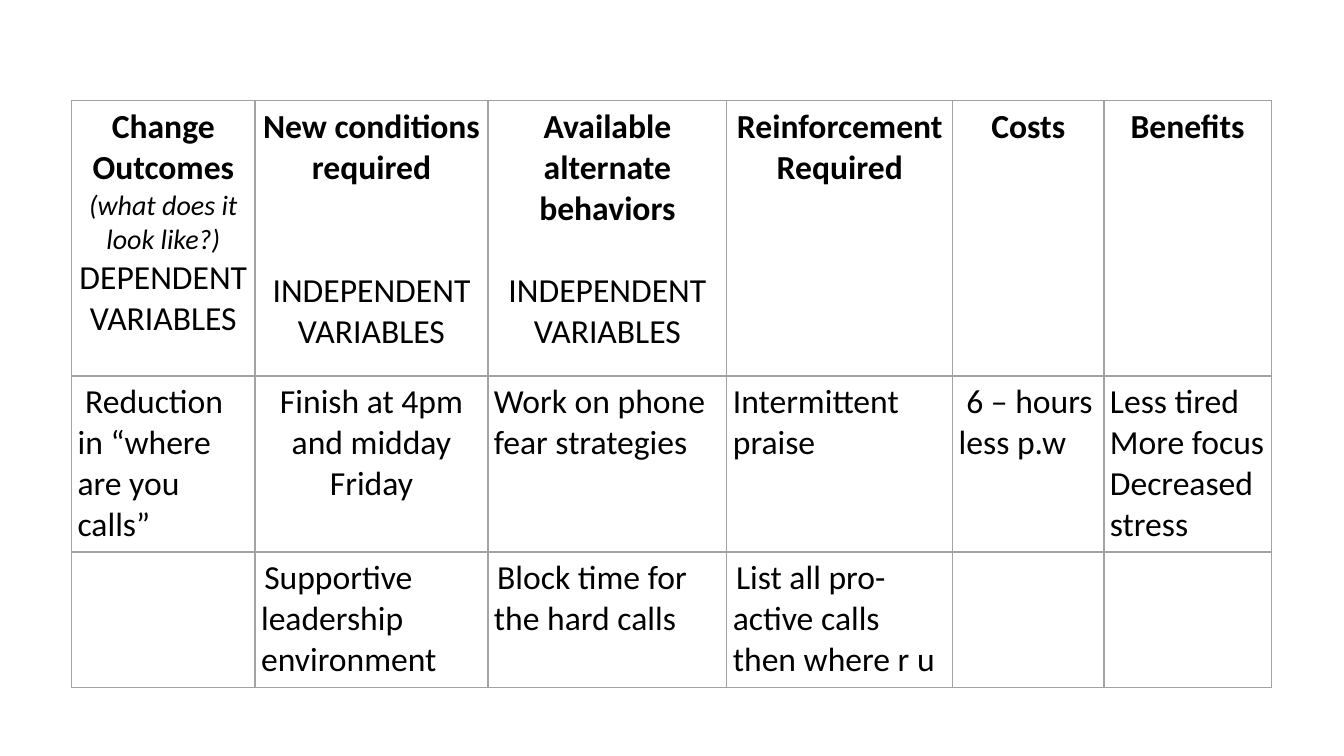
from lxml.etree import SubElement
from pptx import Presentation
from pptx.dml.color import RGBColor
from pptx.enum.text import PP_ALIGN
from pptx.oxml.ns import qn
from pptx.util import Inches, Pt

SLIDE_WIDTH, SLIDE_HEIGHT = 13.33, 7.5
COLUMN_WIDTHS = [1.82, 2.31, 2.37, 2.24, 1.5, 1.66]
ROW_HEIGHTS = [2.73, 1.74, 1.34]
LINE = 29.3  # height of one line of body text, in points


def color(hex_string):
    return RGBColor.from_string(hex_string)


def text(content, **style):
    """Describe one paragraph: its wording and its format."""
    return {"content": content, **style}


def heading(content):
    return text(content, bold=True, center=True)


def variables(kind, gap=0):
    return text(f"{kind} VARIABLES", center=True, before=gap)


class TableSlide:
    font, size, ink = "Calibri", 24, "000000"
    border, border_width, inset = "A3A3A3", 1, 0.06

    def __init__(self, presentation):
        self.slide = presentation.slides.add_slide(presentation.slide_layouts[6])
        self.width = presentation.slide_width
        self.height = presentation.slide_height

    def add_table(self, left, top, column_widths, row_heights, rows):
        """Place a table at shares of the slide's size."""
        shape = self.slide.shapes.add_table(
            len(row_heights), len(column_widths),
            round(left * self.width), round(top * self.height),
            Inches(sum(column_widths)), Inches(sum(row_heights)))
        table = shape.table
        table.first_row = table.horz_banding = False
        for column, width in zip(table.columns, column_widths):
            column.width = Inches(width)
        for row, height, contents in zip(table.rows, row_heights, rows):
            row.height = Inches(height)
            for cell, paragraphs in zip(row.cells, contents):
                self.format_cell(cell)
                self.fill_text(cell.text_frame, paragraphs)

    def format_cell(self, cell):
        cell.margin_left = cell.margin_right = Inches(self.inset)
        cell.margin_top = cell.margin_bottom = Inches(self.inset)
        properties = cell._tc.get_or_add_tcPr()
        for side in ("a:lnL", "a:lnR", "a:lnT", "a:lnB"):
            line = SubElement(properties, qn(side), w=str(Pt(self.border_width)))
            fill = SubElement(line, qn("a:solidFill"))
            SubElement(fill, qn("a:srgbClr"), val=self.border)
        cell.fill.background()

    def fill_text(self, frame, paragraphs):
        for index, item in enumerate(paragraphs):
            paragraph = frame.add_paragraph() if index else frame.paragraphs[0]
            paragraph.alignment = PP_ALIGN.CENTER if item.get("center") else PP_ALIGN.LEFT
            paragraph.space_before = Pt(item.get("before", 0))
            if "indent" in item:  # first line only
                properties = paragraph._p.get_or_add_pPr()
                properties.set("marL", "0")
                properties.set("indent", str(Pt(item["indent"])))
            run = paragraph.add_run()
            run.text = item["content"]
            run.font.name = self.font
            run.font.size = Pt(item.get("size", self.size))
            run.font.bold = item.get("bold", False)
            run.font.italic = item.get("italic", False)
            run.font.color.rgb = color(self.ink)


HEADINGS = [
    [heading("Change Outcomes"),
     text("(what does it look like?)", size=20, italic=True, center=True),
     variables("DEPENDENT")],
    [heading("New conditions required"), variables("INDEPENDENT", 2 * LINE)],
    [heading("Available alternate behaviors"), variables("INDEPENDENT", LINE)],
    [heading("Reinforcement Required")],
    [heading("Costs")],
    [heading("Benefits")],
]
FIRST_PLAN = [
    [text("Reduction in “where are you calls”", indent=5.4)],
    [text("Finish at 4pm and midday Friday", center=True)],
    [text("Work on phone fear strategies")],
    [text("Intermittent praise")],
    [text("6 – hours less p.w", indent=5.4)],
    [text("Less tired"), text("More focus"), text("Decreased stress")],
]
SECOND_PLAN = [
    [],
    [text("Supportive leadership environment", indent=2.3)],
    [text("Block time for the hard calls", indent=2.3)],
    [text("List all pro-active calls then where r u", indent=2.3)],
    [],
    [],
]


def main():
    presentation = Presentation()
    presentation.slide_width = Inches(SLIDE_WIDTH)
    presentation.slide_height = Inches(SLIDE_HEIGHT)

    # Behaviour change plan
    page = TableSlide(presentation)
    page.add_table(0.71 / SLIDE_WIDTH, 1 / SLIDE_HEIGHT, COLUMN_WIDTHS, ROW_HEIGHTS,
                   [HEADINGS, FIRST_PLAN, SECOND_PLAN])
    presentation.save("out.pptx")


if __name__ == "__main__":
    main()
